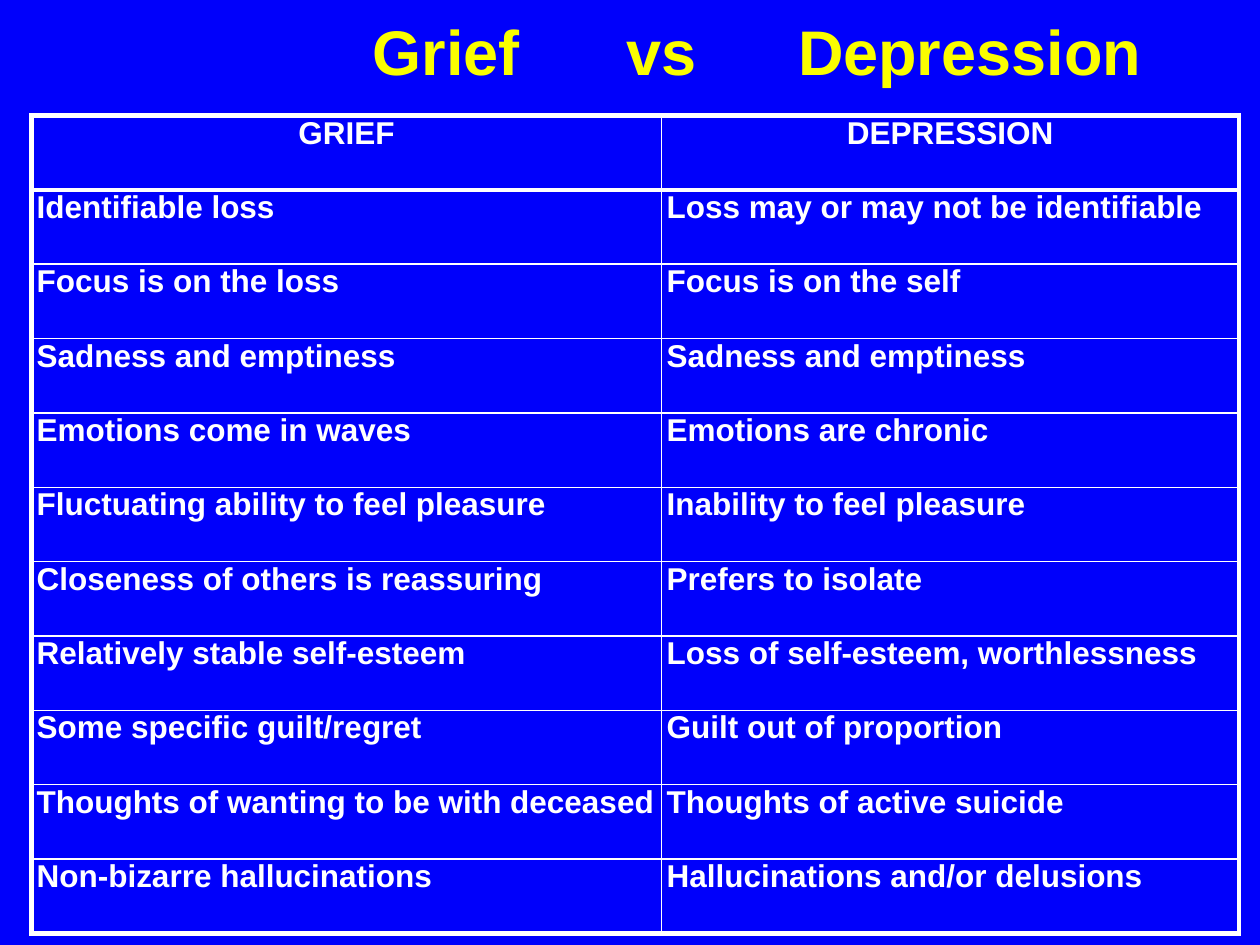
import pptx
import pptx.dml.color
import pptx.enum.text
import pptx.oxml
import pptx.oxml.ns
import pptx.util

Pt = pptx.util.Pt
RGBColor = pptx.dml.color.RGBColor
PP_ALIGN = pptx.enum.text.PP_ALIGN

BLUE = RGBColor(0x00, 0x00, 0xFB)
YELLOW = RGBColor(0xFA, 0xFD, 0x00)
WHITE = RGBColor(0xFF, 0xFF, 0xFF)

COLUMN_WIDTHS = (360, 330)
ROW_HEIGHT = 42.5
OUTER_LINE = 3
INNER_LINE = 1

ROWS = [
    ("GRIEF", "DEPRESSION"),
    ("Identifiable loss", "Loss may or may not be identifiable"),
    ("Focus is on the loss", "Focus is on the self"),
    ("Sadness and emptiness", "Sadness and emptiness"),
    ("Emotions come in waves", "Emotions are chronic"),
    ("Fluctuating ability to feel pleasure", "Inability to feel pleasure"),
    ("Closeness of others is reassuring", "Prefers to isolate"),
    ("Relatively stable self-esteem", "Loss of self-esteem, worthlessness"),
    ("Some specific guilt/regret", "Guilt out of proportion"),
    ("Thoughts of wanting to be with deceased", "Thoughts of active suicide"),
    ("Non-bizarre hallucinations", "Hallucinations and/or delusions"),
]


def write_text(tf, text, size, color, align=PP_ALIGN.LEFT, tabs=()):
    p = tf.paragraphs[0]
    p.alignment = align
    if tabs:
        stops = "".join(f'<a:tab pos="{Pt(pos)}" algn="l"/>' for pos in tabs)
        p._p.get_or_add_pPr().append(pptx.oxml.parse_xml(
            f'<a:tabLst {pptx.oxml.ns.nsdecls("a")}>{stops}</a:tabLst>'))
    r = p.add_run()
    r.text = text
    r.font.name = "Arial"
    r.font.size = Pt(size)
    r.font.bold = True
    r.font.color.rgb = color


def set_border(cell, side, width):
    cell._tc.get_or_add_tcPr().append(pptx.oxml.parse_xml(
        f'<a:ln{side} {pptx.oxml.ns.nsdecls("a")} w="{Pt(width)}">'
        f'<a:solidFill><a:srgbClr val="{WHITE}"/></a:solidFill>'
        f'</a:ln{side}>'))


def add_title(s):
    sp = s.shapes.add_textbox(Pt(48), Pt(-18), Pt(624), Pt(72))
    tf = sp.text_frame
    tf.word_wrap = True
    tf.vertical_anchor = pptx.enum.text.MSO_ANCHOR.BOTTOM
    tf.margin_left = Pt(165)
    write_text(tf, "Grief\tvs\tDepression", 36, YELLOW, tabs=(145, 243))


def add_comparison(s):
    last_row, last_column = len(ROWS) - 1, len(COLUMN_WIDTHS) - 1
    table = s.shapes.add_table(
        len(ROWS), len(COLUMN_WIDTHS), Pt(18), Pt(66),
        Pt(sum(COLUMN_WIDTHS)), Pt(ROW_HEIGHT * len(ROWS))).table
    table.first_row = False
    table.horz_banding = False
    for column, width in zip(table.columns, COLUMN_WIDTHS):
        column.width = Pt(width)
    for i, texts in enumerate(ROWS):
        table.rows[i].height = Pt(ROW_HEIGHT)
        for j, text in enumerate(texts):
            cell = table.cell(i, j)
            cell.margin_left = cell.margin_right = Pt(3)
            cell.margin_top = cell.margin_bottom = 0
            thick = {"L": j == 0, "R": j == last_column,
                     "T": i <= 1, "B": i in (0, last_row)}
            for side, is_thick in thick.items():
                set_border(cell, side, OUTER_LINE if is_thick else INNER_LINE)
            cell.fill.background()
            align = PP_ALIGN.CENTER if i == 0 else PP_ALIGN.LEFT
            write_text(cell.text_frame, text, 18, WHITE, align=align)


def main():
    prs = pptx.Presentation()
    prs.slide_width, prs.slide_height = Pt(720), Pt(540)
    s = prs.slides.add_slide(prs.slide_layouts[6])
    s.background.fill.solid()
    s.background.fill.fore_color.rgb = BLUE
    add_title(s)
    add_comparison(s)
    prs.save("out.pptx")


if __name__ == "__main__":
    main()
